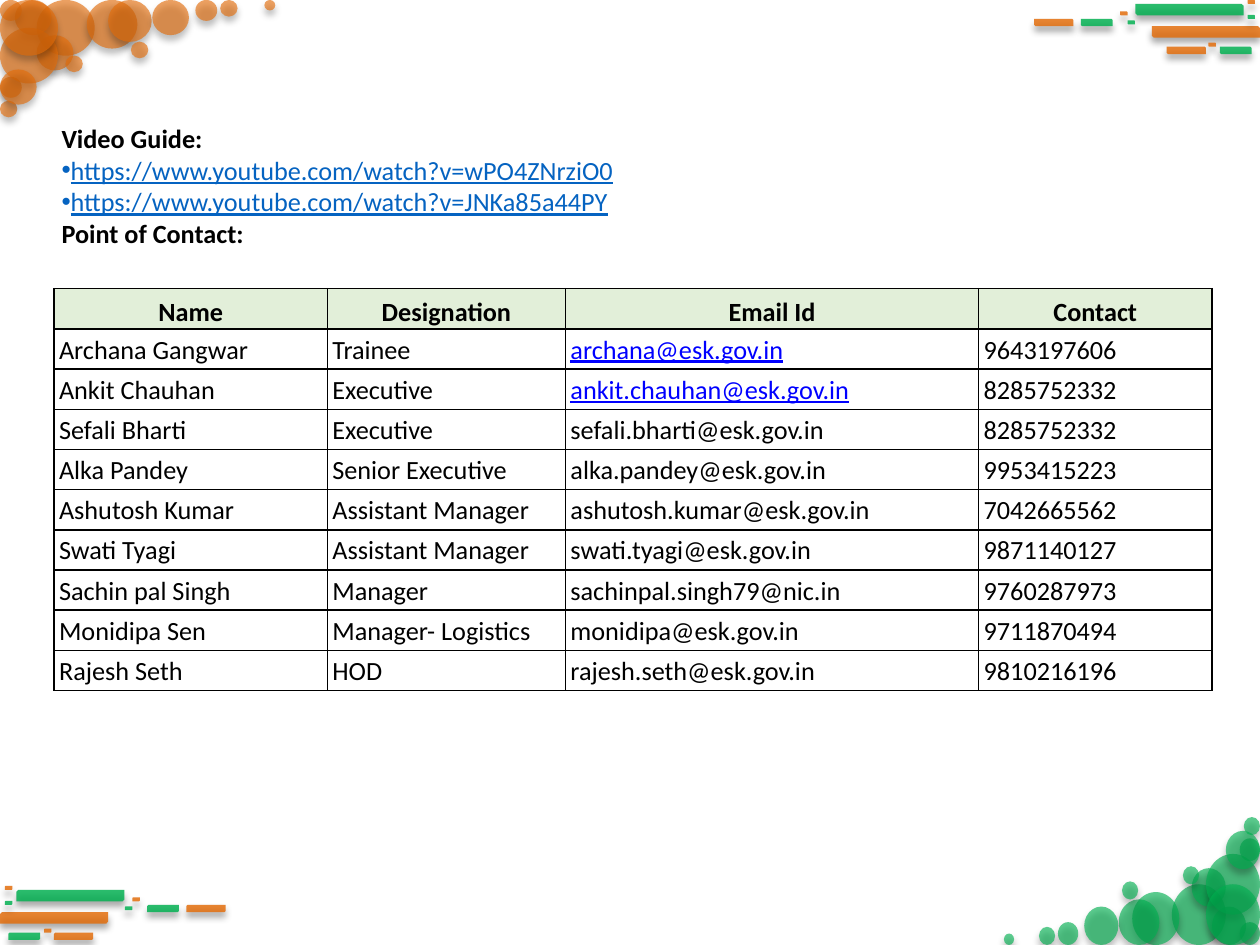
from pptx import Presentation
from pptx.dml.color import RGBColor
from pptx.enum.shapes import MSO_SHAPE
from pptx.enum.text import MSO_ANCHOR, MSO_AUTO_SIZE, PP_ALIGN
from pptx.oxml import parse_xml
from pptx.oxml.ns import nsdecls, qn
from pptx.util import Cm, Pt

BAR, DOT = MSO_SHAPE.SNIP_2_DIAG_RECTANGLE, MSO_SHAPE.OVAL
TOP, MIDDLE, BOTTOM = MSO_ANCHOR.TOP, MSO_ANCHOR.MIDDLE, MSO_ANCHOR.BOTTOM
CENTER, JUSTIFY, LEFT = PP_ALIGN.CENTER, PP_ALIGN.JUSTIFY, PP_ALIGN.LEFT
FIXED = MSO_AUTO_SIZE.NONE

GREEN, ORANGE, BLACK = "00B050", "E36C09", "000000"
LINK, MAIL, HEAD = "0563C1", "0000FF", "E2EFD9"
WIDE, HIGH = 25.4, 19.05
DROP = 17.86

BARS = [
    (22.89, 0.08, 2.18, 0.23, GREEN),
    (23.22, 0.53, 2.18, 0.23, ORANGE),
    (21.79, 0.38, 0.64, 0.15, GREEN),
    (24.59, 0.94, 0.64, 0.15, GREEN),
    (23.52, 0.94, 0.79, 0.15, ORANGE),
    (20.85, 0.38, 0.79, 0.15, ORANGE),
    (22.58, 0.23, 0.15, 0.08, ORANGE),
    (22.73, 0.41, 0.15, 0.08, GREEN),
    (24.36, 0.86, 0.15, 0.08, ORANGE),
    (25.15, 0.3, 0.15, 0.08, GREEN),
    (25.15, 0, 0.15, 0.08, ORANGE),
]
DOTS = [
    (0.74, 0, 1.17), (1.75, 0, 1.02), (0.74, 0.71, 0.74), (2.18, 0, 0.88),
    (3.07, 0, 0.74), (0.3, 0, 0.74), (3.94, 0, 0.44), (0, 1.55, 0.44),
    (2.64, 0.84, 0.35), (1.32, 1.12, 0.35), (0, 2.03, 0.35), (5.33, 0, 0.22),
    (4.44, 0, 0.35), (0, 0, 0.44), (0, 0.56, 1.17), (0, 1.4, 0.74),
    (0, 0, 1.17),
]
GUIDE = [
    ("Video Guide:", False),
    ("https://www.youtube.com/watch?v=wPO4ZNrziO0", True),
    ("https://www.youtube.com/watch?v=JNKa85a44PY", True),
    ("Point of Contact:", False),
]
COLS = [5.51, 4.8, 8.33, 4.7]
STAFF = [
    ("Name", "Designation", "Email Id", "Contact"),
    ("Archana Gangwar", "Trainee", "archana@esk.gov.in", "9643197606"),
    ("Ankit Chauhan", "Executive", "ankit.chauhan@esk.gov.in", "8285752332"),
    ("Sefali Bharti", "Executive", "sefali.bharti@esk.gov.in", "8285752332"),
    ("Alka Pandey", "Senior Executive", "alka.pandey@esk.gov.in", "9953415223"),
    ("Ashutosh Kumar", "Assistant Manager", "ashutosh.kumar@esk.gov.in", "7042665562"),
    ("Swati Tyagi", "Assistant Manager", "swati.tyagi@esk.gov.in", "9871140127"),
    ("Sachin pal Singh", "Manager", "sachinpal.singh79@nic.in", "9760287973"),
    ("Monidipa Sen", "Manager- Logistics", "monidipa@esk.gov.in", "9711870494"),
    ("Rajesh Seth", "HOD", "rajesh.seth@esk.gov.in", "9810216196"),
]


def rgb(code):
    """Turn a hex string into a colour."""
    return RGBColor.from_string(code)


def node(tag, attrs="", inner=""):
    """Make one drawing element."""
    return parse_xml(f"<a:{tag} {nsdecls('a')} {attrs}>{inner}</a:{tag}>")


class Deck:
    """Hold the text style and the current slide."""

    def __init__(self, slide, font="Calibri", size=15):
        self.slide, self.font, self.size = slide, font, size

    def group(self):
        """Add an empty group and return its shapes."""
        return self.slide.shapes.add_group_shape().shapes

    def shape(self, group, kind, box, color, alpha):
        """Add a translucent shape with a soft shadow below it."""
        item = group.add_shape(kind, *map(Cm, box))
        item.fill.solid()
        item.fill.fore_color.rgb = rgb(color)
        item.line.fill.background()
        item.shadow.inherit = False
        props = item.element.spPr
        props.find(".//" + qn("a:srgbClr")).append(node("alpha", f'val="{alpha * 1000}"'))
        tint = f'<a:srgbClr val="{BLACK}"><a:alpha val="40000"/></a:srgbClr>'
        props.find(qn("a:effectLst")).append(node(
            "outerShdw",
            f'blurRad="{Pt(4)}" dist="{Pt(3)}" dir="5400000" rotWithShape="0"', tint))
        return item

    def bars(self, flip):
        """Draw the bars at top right, or mirrored at bottom left."""
        group = self.group()
        for left, top, wide, high, color in BARS:
            if flip:
                left, top = WIDE - left - wide, top + DROP
            bar = self.shape(group, BAR, (left, top, wide, high), color, 83)
            if flip:
                bar.element.spPr.find(qn("a:xfrm")).set("flipH", "1")

    def dots(self, color, turn):
        """Draw the dots at top left, or turned and scaled at bottom right."""
        group = self.group()
        for left, top, wide in DOTS:
            high = 0.96 * wide
            if turn:
                wide, high = wide * 0.93, high * 1.09
                left = WIDE - left * 0.93 - wide
                top = HIGH - top * 1.09 - high
            self.shape(group, DOT, (left, top, wide, high), color, 63)

    def run(self, para, text, color=BLACK, bold=False, line=False):
        """Add one styled run."""
        run = para.add_run()
        run.text = text
        font = run.font
        font.name, font.size = self.font, Pt(self.size)
        font.bold, font.underline = bold, line
        font.color.rgb = rgb(color)

    def body(self, box, rows):
        """Fill the body placeholder with headings and bulleted links."""
        item = self.slide.placeholders[1]
        item.left, item.top, item.width, item.height = map(Cm, box)
        frame = item.text_frame
        frame.word_wrap, frame.auto_size = True, FIXED
        frame.vertical_anchor = TOP
        frame.margin_left = frame.margin_right = Cm(0.15)
        frame.margin_top = frame.margin_bottom = Cm(0.08)
        for spot, (text, link) in enumerate(rows):
            para = frame.add_paragraph() if spot else frame.paragraphs[0]
            para.alignment = LEFT
            para.space_before = Pt(0)
            props = para._p.get_or_add_pPr()
            props.set("marL", "0")
            props.set("indent", str(Cm(-0.25) if link else 0))
            if link:
                props.append(node("buClr", inner=f'<a:srgbClr val="{LINK}"/>'))
                props.append(node("buChar", 'char="•"'))
            else:
                props.append(node("buNone"))
            self.run(para, text, LINK if link else BLACK, not link, link)

    def cell(self, cell, text, head, mail):
        """Style and fill one table cell."""
        cell.margin_left = cell.margin_right = Cm(0.1)
        cell.margin_top = cell.margin_bottom = 0
        cell.vertical_anchor = BOTTOM if head else MIDDLE
        props = cell._tc.get_or_add_tcPr()
        paint = f'<a:solidFill><a:srgbClr val="{BLACK}"/></a:solidFill>'
        for side in "LRTB":
            props.append(node("ln" + side, f'w="{Pt(1)}"', paint))
        if head:
            cell.fill.solid()
            cell.fill.fore_color.rgb = rgb(HEAD)
        else:
            cell.fill.background()
        para = cell.text_frame.paragraphs[0]
        para.alignment = CENTER if head else JUSTIFY
        para.line_spacing = 1.07
        self.run(para, text, MAIL if mail else BLACK, head, mail)

    def table(self, left, top, high, cols, rows):
        """Add the bordered contact table."""
        table = self.slide.shapes.add_table(
            len(rows), len(cols), Cm(left), Cm(top),
            Cm(sum(cols)), Cm(high * len(rows))).table
        table.horz_banding = table.first_row = False
        for col, wide in zip(table.columns, cols):
            col.width = Cm(wide)
        for r, row in enumerate(rows):
            table.rows[r].height = Cm(high)
            for c, text in enumerate(row):
                self.cell(table.cell(r, c), text, r == 0, c == 2 and r in (1, 2))


def main():
    """Build and save the contact slide."""
    show = Presentation()
    show.slide_width, show.slide_height = Cm(WIDE), Cm(HIGH)
    slide = show.slides.add_slide(show.slide_layouts[1])
    title = slide.shapes.title.element
    title.getparent().remove(title)
    deck = Deck(slide)
    deck.bars(False)
    deck.dots(GREEN, True)
    deck.bars(True)
    deck.dots(ORANGE, False)
    deck.table(1.09, 5.82, 0.81, COLS, STAFF)
    deck.body((1.09, 2.39, 23.52, 3.35), GUIDE)
    show.save("out.pptx")


if __name__ == "__main__":
    main()
